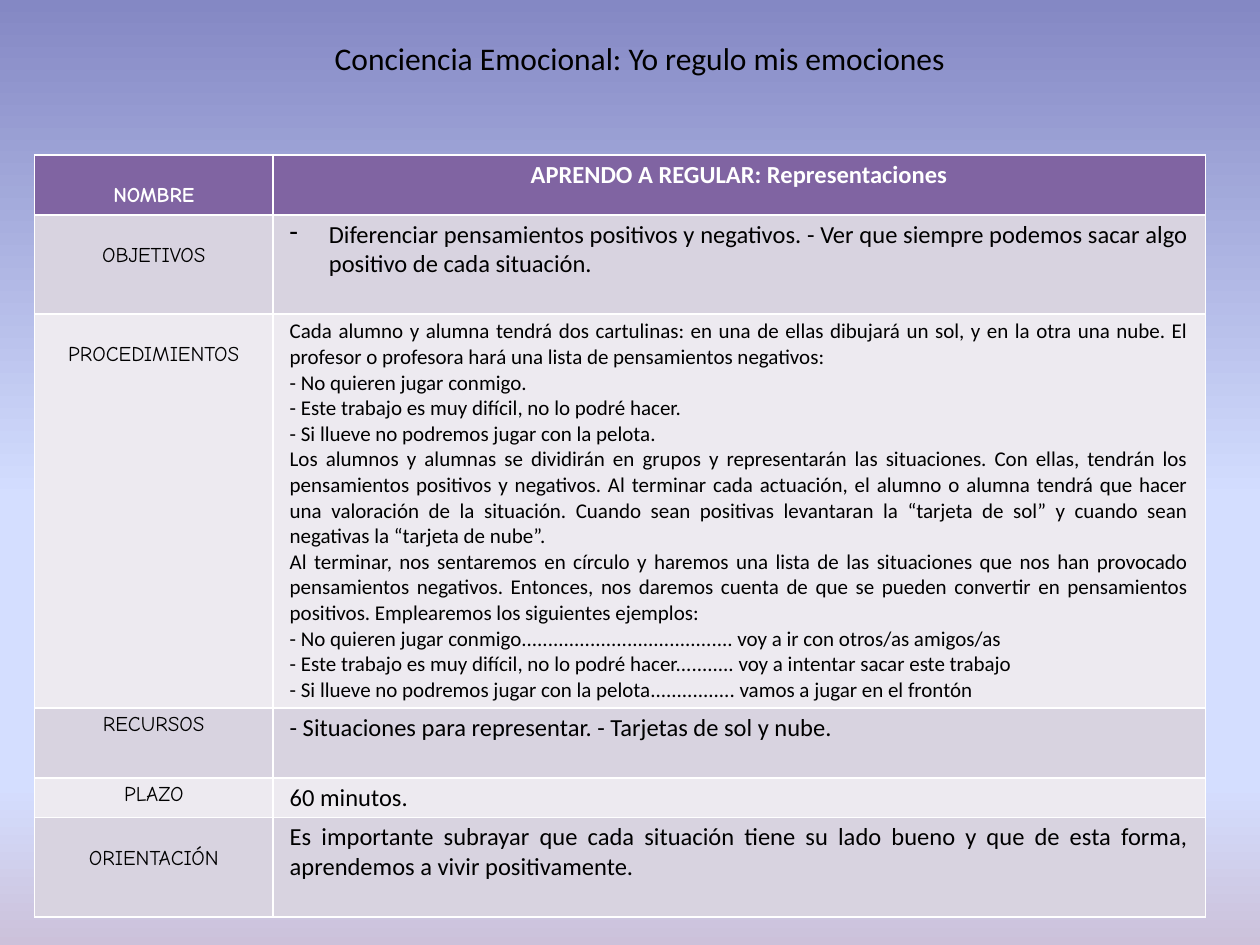
from copy import deepcopy
from dataclasses import dataclass

from lxml.etree import SubElement
from pptx import Presentation
from pptx.dml.color import RGBColor as RGB
from pptx.enum.text import MSO_AUTO_SIZE as AutoSize, PP_ALIGN as Align
from pptx.oxml.ns import qn
from pptx.util import Cm, Pt


@dataclass(frozen=True)
class Theme:
    font: str = "Calibri"
    label_font: str = "Comic Neue"
    title: int = 18
    body: int = 14
    small: int = 12
    text: RGB = RGB(0, 0, 0)
    header_text: RGB = RGB(255, 255, 255)
    header: RGB = RGB.from_string("8064A2")
    bands: tuple = (RGB.from_string("EDEAF0"), RGB.from_string("D8D3E0"))
    sky: tuple = ((0, "8488C4"), (0.53, "D4DEFF"), (0.83, "D4DEFF"), (1, "CCC1DA"))


@dataclass(frozen=True)
class Row:
    label: str
    lines: tuple
    height: float
    size: int = Theme.body
    align: Align = Align.JUSTIFY
    lowered: bool = True
    bullet: bool = False


THEME = Theme()
TITLE = "Conciencia Emocional: Yo regulo mis emociones"
ROWS = (
    Row("NOMBRE", ("APRENDO A REGULAR: Representaciones",), 1.21, align=Align.CENTER),
    Row("OBJETIVOS", (
        "Diferenciar pensamientos positivos y negativos. - Ver que siempre podemos "
        "sacar algo positivo de cada situación.",), 2, bullet=True),
    Row("PROCEDIMIENTOS", (
        "Cada alumno y alumna tendrá dos cartulinas: en una de ellas dibujará un sol, "
        "y en la otra una nube. El profesor o profesora hará una lista de "
        "pensamientos negativos: ",
        "- No quieren jugar conmigo. ",
        "- Este trabajo es muy difícil, no lo podré hacer. ",
        "- Si llueve no podremos jugar con la pelota.",
        "Los alumnos y alumnas se dividirán en grupos y representarán las situaciones. "
        "Con ellas, tendrán los pensamientos positivos y negativos. Al terminar cada "
        "actuación, el alumno o alumna tendrá que hacer una valoración de la "
        "situación. Cuando sean positivas levantaran la “tarjeta de sol” y cuando "
        "sean negativas la “tarjeta de nube”.",
        "Al terminar, nos sentaremos en círculo y haremos una lista de las situaciones "
        "que nos han provocado pensamientos negativos. Entonces, nos daremos cuenta "
        "de que se pueden convertir en pensamientos positivos. Emplearemos los "
        "siguientes ejemplos: ",
        "- No quieren jugar conmigo........................................ "
        "voy a ir con otros/as amigos/as ",
        "- Este trabajo es muy difícil, no lo podré hacer........... "
        "voy a intentar sacar este trabajo ",
        "- Si llueve no podremos jugar con la pelota................ "
        "vamos a jugar en el frontón",
    ), 7.92, size=THEME.small),
    Row("RECURSOS", ("- Situaciones para representar. - Tarjetas de sol y nube.",),
        1.41, align=Align.LEFT, lowered=False),
    Row("PLAZO", ("60 minutos.",), 0.77, align=Align.LEFT, lowered=False),
    Row("ORIENTACIÓN", (
        "Es importante subrayar que cada situación tiene su lado bueno y que de esta "
        "forma, aprendemos a vivir positivamente.",), 2),
)


def paint_background(s):
    fill = s.background.fill
    fill.gradient()
    fill.gradient_angle = 270
    stops = s.element.find(".//" + qn("a:gsLst"))
    while len(stops) < len(THEME.sky):
        stops.append(deepcopy(stops[0]))
    for stop, (position, color) in zip(fill.gradient_stops, THEME.sky):
        stop.position = position
        stop.color.rgb = RGB.from_string(color)


def write(tf, lines, font, size, color, align, bold=False):
    tf.text = "\n".join(lines)
    tf.word_wrap = True
    for p in tf.paragraphs:
        p.alignment = align
        for r in p.runs:
            r.font.name, r.font.size, r.font.bold = font, Pt(size), bold
            r.font.color.rgb = color


def add_dash(p, indent):
    """Give the paragraph a hanging dash bullet."""
    pPr = p._p.get_or_add_pPr()
    pPr.set("marL", str(indent))
    pPr.set("indent", str(-indent))
    SubElement(pPr, qn("a:buChar")).set("char", "-")


def add_title(s, left, top, width, height):
    tf = s.shapes.add_textbox(left, top, width, height).text_frame
    write(tf, [TITLE], THEME.font, THEME.title, THEME.text, Align.CENTER)
    tf.auto_size = AutoSize.SHAPE_TO_FIT_TEXT


def add_activity_table(s, left, top, width, label_width):
    height = Cm(sum(row.height for row in ROWS))
    table = s.shapes.add_table(len(ROWS), 2, left, top, width, height).table
    table.columns[0].width = label_width
    table.columns[1].width = width - label_width
    for i, row in enumerate(ROWS):
        table.rows[i].height = Cm(row.height)
        label, content = table.cell(i, 0), table.cell(i, 1)
        is_header = i == 0
        color = THEME.header_text if is_header else THEME.text
        for cell in (label, content):
            cell.fill.solid()
            cell.fill.fore_color.rgb = THEME.header if is_header else THEME.bands[i % 2]
            cell.margin_left = cell.margin_right = Cm(0.34)
            cell.margin_top = cell.margin_bottom = Cm(0.1)
        if row.lowered:
            label.margin_top = Cm(0.58)
        write(label.text_frame, [row.label], THEME.label_font, THEME.small,
              color, Align.CENTER, is_header)
        write(content.text_frame, row.lines, THEME.font, row.size,
              color, row.align, is_header)
        if row.bullet:
            add_dash(content.text_frame.paragraphs[0], Cm(0.79))


def main():
    prs = Presentation()
    prs.slide_width, prs.slide_height = Cm(25.4), Cm(19.05)
    s = prs.slides.add_slide(prs.slide_layouts[6])
    paint_background(s)
    add_activity_table(s, Cm(0.7), Cm(3.12), Cm(23.6), Cm(4.8))
    add_title(s, Cm(5.9), Cm(0.66), Cm(14), Cm(1.02))
    prs.save("out.pptx")


if __name__ == "__main__":
    main()
